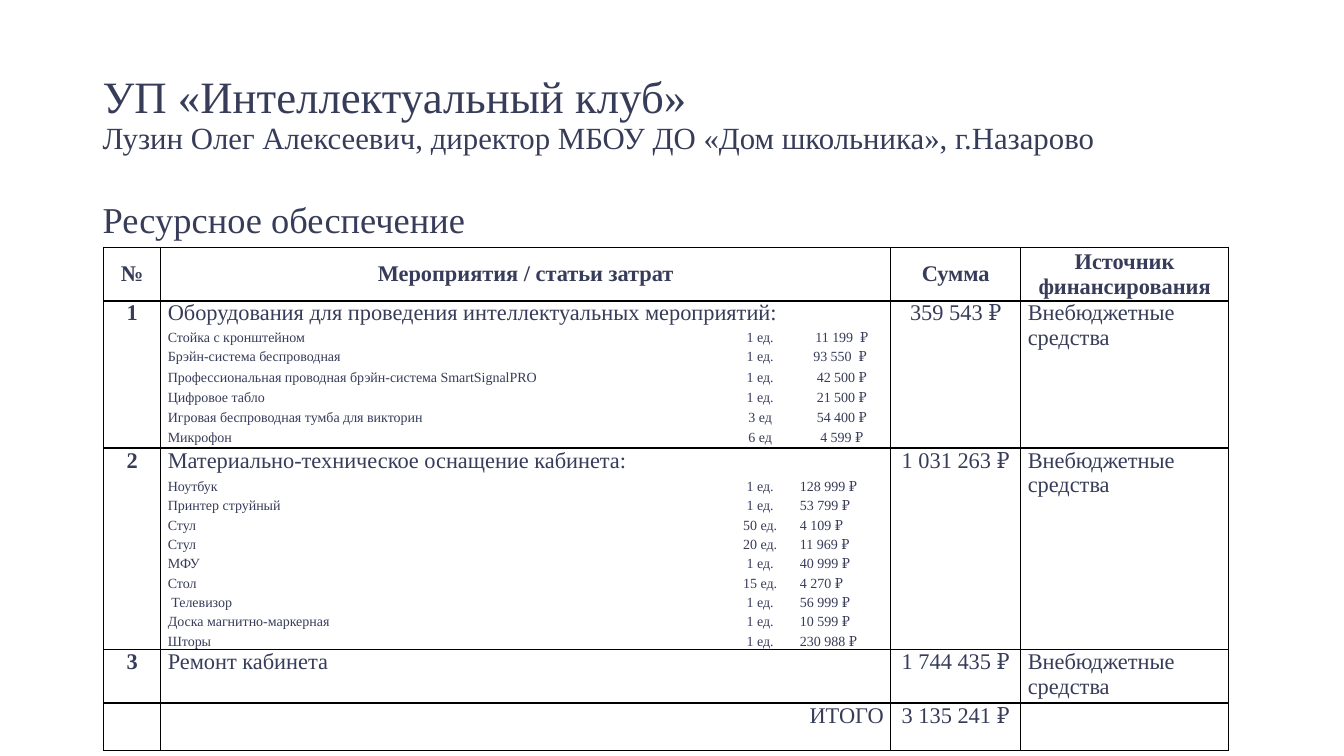
from dataclasses import dataclass
from lxml.etree import SubElement
from pptx import Presentation
from pptx.dml.color import RGBColor
from pptx.enum.text import MSO_ANCHOR, PP_ALIGN
from pptx.oxml.ns import qn
from pptx.util import Inches, Pt


@dataclass(frozen=True)
class Theme:
    font: str = "Times New Roman"
    ink: str = "373C59"
    rule: str = "000000"
    line: float = 1
    title: float = 32
    author: float = 22
    topic: float = 26
    cell: float = 16
    item: float = 10


THEME = Theme()
WIDE, HIGH = Inches(13.33), Inches(7.5)
LEFT, MID, RIGHT, EVEN = PP_ALIGN.LEFT, PP_ALIGN.CENTER, PP_ALIGN.RIGHT, PP_ALIGN.JUSTIFY
PLAIN = "{2D5ABB26-0587-4C30-8999-92F81FD0307C}"
COLS = [0.57, 5.62, 0.65, 0.97, 1.29, 2.06]
EDGES = {0, 1, 4, 5, 6}
HEAD, LAST = 0.3, 0.47
FUND = "Внебюджетные средства"
GROUPS = [
    ("1", "Оборудования для проведения интеллектуальных мероприятий:", "359 543 ₽",
     [0.2, 0] + [0.2] * 5, MSO_ANCHOR.TOP, MID, [
         ("Стойка с кронштейном", "1 ед.", "11 199  ₽"),
         ("Брэйн-система беспроводная", "1 ед.", "93 550  ₽ "),
         ("Профессиональная проводная брэйн-система SmartSignalPRO", "1 ед.", "42 500 ₽"),
         ("Цифровое табло", "1 ед.", "21 500 ₽"),
         ("Игровая беспроводная тумба для викторин", "3 ед", "54 400 ₽"),
         ("Микрофон", "6 ед", "4 599 ₽"),
     ]),
    ("2", "Материально-техническое оснащение кабинета:", "1 031 263 ₽",
     [0.14] * 10, MSO_ANCHOR.BOTTOM, LEFT, [
         ("Ноутбук", "1 ед.", "128 999 ₽"),
         ("Принтер струйный", "1 ед.", "53 799 ₽"),
         ("Стул", "50 ед.", "4 109 ₽"),
         ("Стул", "20 ед.", "11 969 ₽"),
         ("МФУ", "1 ед.", "40 999 ₽"),
         ("Стол", "15 ед.", "4 270 ₽"),
         (" Телевизор", "1 ед.", "56 999 ₽"),
         ("Доска магнитно-маркерная", "1 ед.", "10 599 ₽"),
         ("Шторы", "1 ед.", "230 988 ₽"),
     ]),
    ("3", "Ремонт кабинета", "1 744 435 ₽", [LAST], MSO_ANCHOR.TOP, LEFT, []),
]


def style(font, size, bold=False):
    font.name, font.size, font.bold = THEME.font, Pt(size), bold
    font.color.rgb = RGBColor.from_string(THEME.ink)


def place(left, top, width, height):
    return [int(share * side / 100) for share, side in
            zip((left, top, width, height), (WIDE, HIGH, WIDE, HIGH))]


def add_text(slide, area, lines, gap, anchor=MSO_ANCHOR.TOP):
    frame = slide.shapes.add_textbox(*place(*area)).text_frame
    frame.word_wrap, frame.vertical_anchor = True, anchor
    para = frame.paragraphs[0]
    para.line_spacing = gap
    for order, (text, size) in enumerate(lines):
        if order:
            para.add_line_break()
        run = para.add_run()
        run.text = text
        style(run.font, size)


def add_edge(props, side, shown):
    line = SubElement(props, qn("a:ln" + side), w=str(Pt(THEME.line)))
    if shown:
        fill = SubElement(line, qn("a:solidFill"))
        SubElement(fill, qn("a:srgbClr"), val=THEME.rule)
    else:
        SubElement(line, qn("a:noFill"))


def frame_cells(table, breaks):
    for row in range(len(table.rows)):
        for col in range(len(COLS)):
            cell = table.cell(row, col)
            props = cell._tc.get_or_add_tcPr()
            add_edge(props, "L", col in EDGES)
            add_edge(props, "R", col + 1 in EDGES)
            add_edge(props, "T", row in breaks)
            add_edge(props, "B", row + 1 in breaks)
            cell.fill.background()
            cell.margin_left = cell.margin_right = Inches(0.07)
            cell.margin_top = cell.margin_bottom = 0
            style(cell.text_frame.paragraphs[0].font, THEME.item)


def write(cell, text, align, size=THEME.cell, bold=False, anchor=MSO_ANCHOR.TOP, gap=None):
    cell.vertical_anchor = anchor
    para = cell.text_frame.paragraphs[0]
    para.text, para.alignment, para.line_spacing = text, align, gap
    style(para.font, size, bold)


def join(table, top, left, low, right):
    table.cell(top, left).merge(table.cell(low, right))


def add_group(table, top, group):
    number, name, total, _, anchor, align, items = group
    low = top + len(items)
    join(table, top, 1, top, 3)
    if items:
        for col in (0, 4, 5):
            join(table, top, col, low, col)
    write(table.cell(top, 0), number, MID, bold=True)
    write(table.cell(top, 1), name, EVEN)
    write(table.cell(top, 4), total, MID)
    write(table.cell(top, 5), FUND, EVEN)
    for row, item in enumerate(items, top + 1):
        for col, (text, side) in enumerate(zip(item, (LEFT, MID, align)), 1):
            write(table.cell(row, col), text, side, THEME.item, anchor=anchor, gap=1.15)


def add_costs(slide, area):
    highs, starts = [HEAD], []
    for group in GROUPS:
        starts.append(len(highs))
        highs += group[3]
    last = len(highs)
    highs.append(LAST)
    box = place(*area)
    shape = slide.shapes.add_table(len(highs), len(COLS), *box)
    table = shape.table
    table.first_row = table.horz_banding = False
    table._tbl.tblPr.find(qn("a:tableStyleId")).text = PLAIN
    for col, width in zip(table.columns, COLS):
        col.width = Inches(width)
    for row, height in zip(table.rows, highs):
        row.height = Inches(height)
    shape.height = box[3]
    frame_cells(table, {0, *starts, last, last + 1})
    join(table, 0, 1, 0, 3)
    heads = ("№", "Мероприятия / статьи затрат", "Сумма", "Источник финансирования")
    for col, text in zip((0, 1, 4, 5), heads):
        write(table.cell(0, col), text, MID, bold=True, anchor=MSO_ANCHOR.MIDDLE)
    for top, group in zip(starts, GROUPS):
        add_group(table, top, group)
    join(table, last, 1, last, 3)
    write(table.cell(last, 1), "ИТОГО", RIGHT)
    write(table.cell(last, 4), "3 135 241 ₽", MID)


def main():
    deck = Presentation()
    deck.slide_width, deck.slide_height = WIDE, HIGH
    slide = deck.slides.add_slide(deck.slide_layouts[6])
    add_text(slide, (6.9, 5.6, 86.27, 19.33), [
        ("УП «Интеллектуальный клуб»", THEME.title),
        ("Лузин Олег Алексеевич, директор МБОУ ДО «Дом школьника», г.Назарово", THEME.author),
    ], 0.9, MSO_ANCHOR.MIDDLE)
    add_text(slide, (6.9, 25.07, 90.25, 66.8), [("Ресурсное обеспечение", THEME.topic)], 1.07)
    add_costs(slide, (7.69, 32.7, 83.72, 64.8))
    deck.save("out.pptx")


if __name__ == "__main__":
    main()
